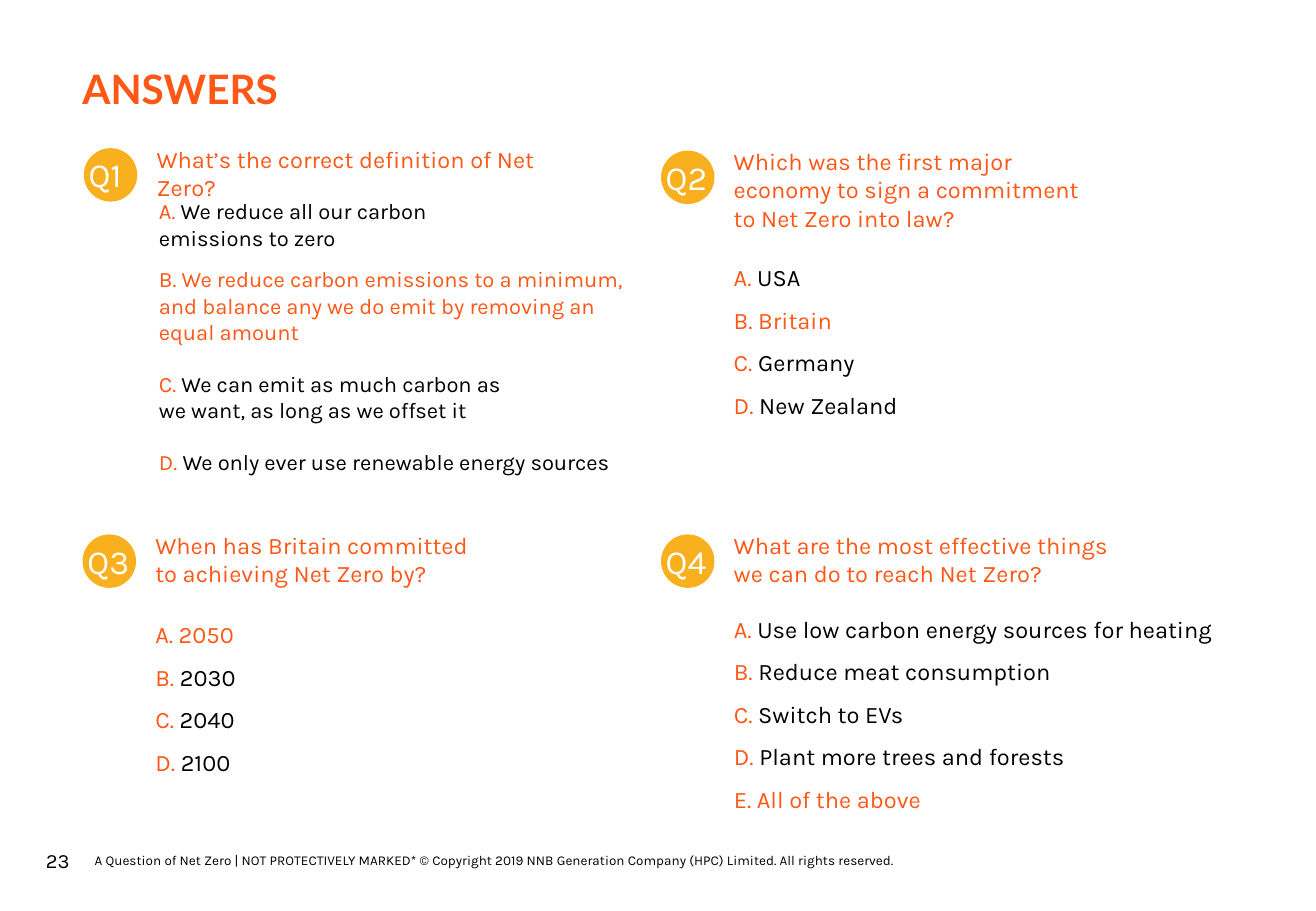
from pptx import Presentation
from pptx.dml.color import RGBColor
from pptx.enum.shapes import MSO_SHAPE
from pptx.enum.text import MSO_ANCHOR, PP_ALIGN
from pptx.util import Inches, Pt

OVAL = MSO_SHAPE.OVAL
TOP, MIDDLE = MSO_ANCHOR.TOP, MSO_ANCHOR.MIDDLE
LEFT, RIGHT = PP_ALIGN.LEFT, PP_ALIGN.RIGHT
ORANGE, AMBER, BLACK, WHITE = "FE5716", "F9B01E", "000000", "FFFFFF"
WIDTH, HEIGHT = 10.83, 7.5
BADGE = 0.44

TITLE = "ANSWERS"
PAGE_NUMBER = "23"
FOOTER = ("A Question of Net Zero | NOT PROTECTIVELY MARKED* © Copyright 2019 "
          "NNB Generation Company (HPC) Limited. All rights reserved.")

QUESTIONS = [
    {"badge": (0.69, 1.22), "ask": "What’s the correct definition of Net Zero?",
     "ask_size": (3.71, 0.57), "answer_box": (1.21, 1.58, 4.05, 2.42),
     "correct": "B", "size": 13, "spacing": [1] * 4, "gaps": [0, 9, 15.2, 15.2],
     "answers": ["We reduce all our carbon\nemissions to zero",
                 "We reduce carbon emissions to a minimum, and balance any we do emit "
                 "by removing an equal amount",
                 "We can emit as much carbon as\nwe want, as long as we offset it",
                 "We only ever use renewable energy sources"]},
    {"badge": (5.44, 1.24),
     "ask": "Which was the first major economy to sign a commitment to Net Zero into law?",
     "ask_size": (3.17, 0.81), "answer_box": (5.94, 2, 2.37, 1.48),
     "correct": "B", "size": 14, "spacing": [1.5] * 4, "gaps": [0] * 4,
     "answers": ["USA", "Britain", "Germany", "New Zealand"]},
    {"badge": (0.68, 4.4), "ask": "When has Britain committed to achieving Net Zero by?",
     "ask_size": (2.9, 0.57), "answer_box": (1.18, 4.94, 2.34, 1.48),
     "correct": "A", "size": 14, "spacing": [1.5] * 4, "gaps": [0] * 4,
     "answers": ["2050", "2030", "2040", "2100"]},
    {"badge": (5.44, 4.4),
     "ask": "What are the most effective things\nwe can do to reach Net Zero?",
     "ask_size": (3.53, 0.81), "answer_box": (5.94, 5.01, 4.41, 1.71),
     "correct": "E", "size": 14, "spacing": [1] + [1.5] * 4, "gaps": [0] * 5,
     "answers": ["Use low carbon energy sources for heating", "Reduce meat consumption",
                 "Switch to EVs", "Plant more trees and forests", "All of the above"]},
]


def colour(value):
    return RGBColor.from_string(value)


def add_box(page, left, top, width, height, anchor=TOP):
    box = page.shapes.add_textbox(*map(Inches, (left, top, width, height)))
    box.text_frame.word_wrap = True
    box.text_frame.vertical_anchor = anchor
    return box.text_frame.paragraphs[0]


def write(para, text, size=14, fill=ORANGE, font="Karla", bold=False, align=LEFT):
    para.alignment = align
    for index, line in enumerate(text.split("\n")):
        if index:
            para.add_line_break()
        span = para.add_run()
        span.text = line
        span.font.name, span.font.size, span.font.bold = font, Pt(size), bold
        span.font.color.rgb = colour(fill)


def add_badge(page, left, top, label):
    disc = page.shapes.add_shape(OVAL, *map(Inches, (left, top, BADGE, BADGE)))
    disc.shadow.inherit = False
    disc.fill.solid()
    disc.fill.fore_color.rgb = colour(AMBER)
    disc.line.fill.background()
    write(add_box(page, left - 0.06, top, 0.62, BADGE), label, size=20, fill=WHITE)


def add_answers(page, question):
    para = add_box(page, *question["answer_box"])
    frame = para._parent
    rows = zip("ABCDE", question["answers"], question["spacing"], question["gaps"])
    for index, (letter, answer, spacing, gap) in enumerate(rows):
        if index:
            para = frame.add_paragraph()
            para.space_before = Pt(gap)
        para.line_spacing = spacing
        write(para, f"{letter}. ", size=question["size"])
        fill = ORANGE if letter == question["correct"] else BLACK
        write(para, answer, size=question["size"], fill=fill)


def main():
    deck = Presentation()
    deck.slide_width, deck.slide_height = Inches(WIDTH), Inches(HEIGHT)
    page = deck.slides.add_slide(deck.slide_layouts[6])

    title = add_box(page, 0.58, 0.57, 2.17, 0.36, MIDDLE)
    title.line_spacing = 0.9
    write(title, TITLE, size=24, font="Lato", bold=True)

    for number, question in enumerate(QUESTIONS, 1):
        left, top = question["badge"]
        add_badge(page, left, top, f"Q{number}")
        write(add_box(page, left + 0.5, top - 0.08, *question["ask_size"]), question["ask"])
        add_answers(page, question)

    write(add_box(page, 0.23, 6.88, 0.44, 0.4, MIDDLE), PAGE_NUMBER,
          size=12, fill=BLACK, align=RIGHT)
    write(add_box(page, 0.68, 6.92, 8.76, 0.33, MIDDLE), FOOTER, size=8, fill=BLACK)
    deck.save("out.pptx")


if __name__ == "__main__":
    main()
